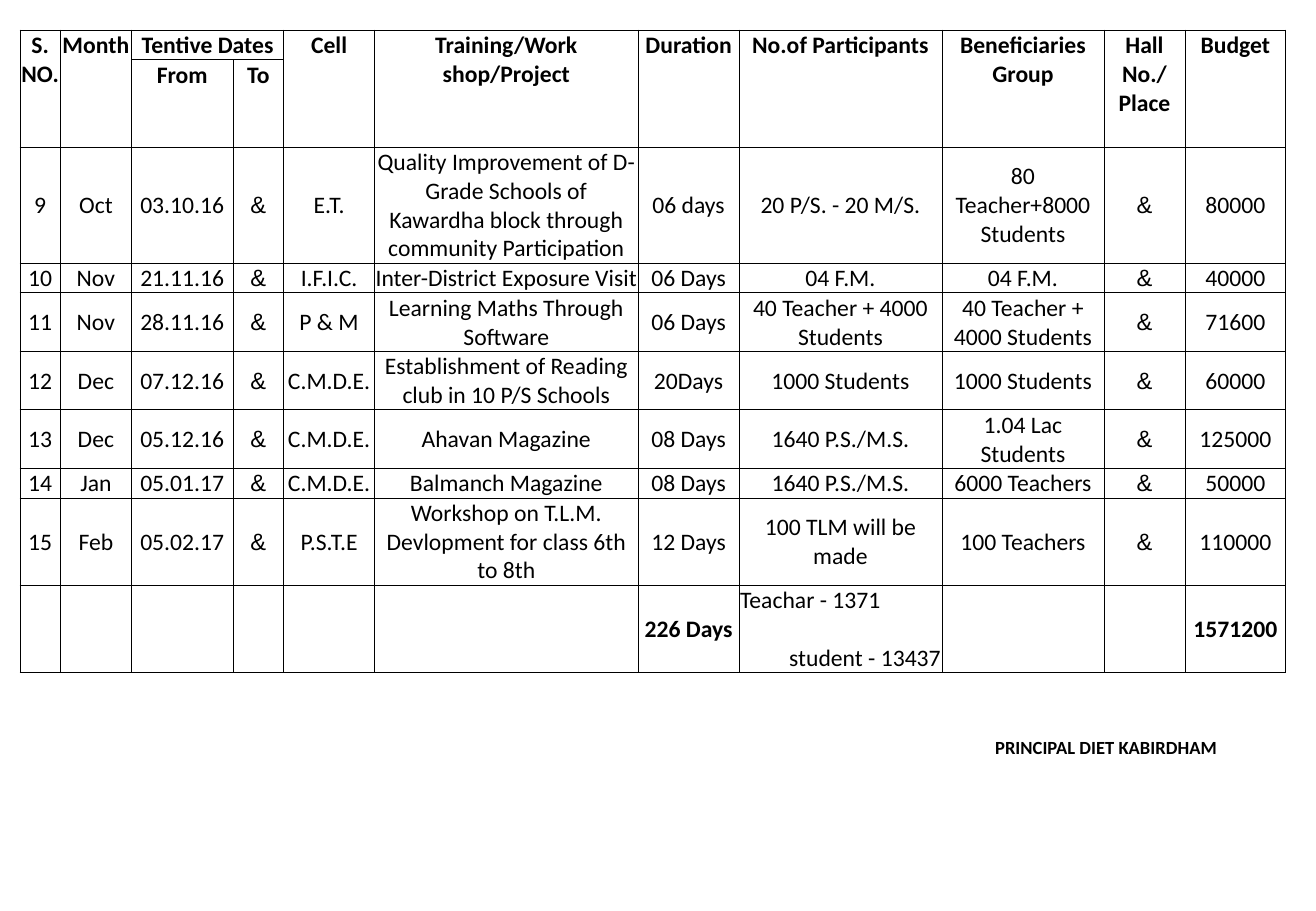
from lxml.etree import SubElement
from pptx import Presentation
from pptx.dml.color import RGBColor
from pptx.enum.text import MSO_ANCHOR, PP_ALIGN
from pptx.oxml.ns import qn
from pptx.util import Cm, Pt

COLORS = {"text": "000000", "border": "000000"}
WIDTHS = [0.84, 1.49, 2.12, 1.06, 1.9, 5.51, 2.11, 4.24, 3.39, 1.69, 2.11]
LINES = [1, 3, 4, 1, 2, 2, 2, 1, 3, 3]
ROWS = [
    ["S. NO.", "Month", "Tentive Dates", "", "Cell", "Training/Work shop/Project",
     "Duration", "No.of Participants", "Beneficiaries Group", "Hall No./ Place", "Budget"],
    ["", "", "From", "To", "", "", "", "", "", "", ""],
    ["9", "Oct", "03.10.16", "&", "E.T.",
     "Quality Improvement of D-Grade Schools of Kawardha block through community Participation",
     "06 days", "20 P/S. - 20 M/S.", "80 Teacher+8000 Students", "&", "80000"],
    ["10", "Nov", "21.11.16", "&", "I.F.I.C.", "Inter-District Exposure Visit",
     "06 Days", "04 F.M.", "04 F.M.", "&", "40000"],
    ["11", "Nov", "28.11.16", "&", "P & M", "Learning Maths Through Software",
     "06 Days", "40 Teacher + 4000 Students", "40 Teacher + 4000 Students", "&", "71600"],
    ["12", "Dec", "07.12.16", "&", "C.M.D.E.", "Establishment of Reading club in 10 P/S Schools",
     "20Days", "1000 Students", "1000 Students", "&", "60000"],
    ["13", "Dec", "05.12.16", "&", "C.M.D.E.", "Ahavan Magazine",
     "08 Days", "1640 P.S./M.S.", "1.04 Lac Students", "&", "125000"],
    ["14", "Jan", "05.01.17", "&", "C.M.D.E.", "Balmanch Magazine",
     "08 Days", "1640 P.S./M.S.", "6000 Teachers", "&", "50000"],
    ["15", "Feb", "05.02.17", "&", "P.S.T.E", "Workshop on T.L.M. Devlopment for class 6th to 8th",
     "12 Days", "100 TLM will be made", "100 Teachers", "&", "110000"],
    ["", "", "", "", "", "", "226 Days", "Teachar - 1371", "", "", "1571200"],
]


def add_text(para, text, size, bold, align=PP_ALIGN.CENTER):
    para.alignment = align
    span = para.add_run()
    span.text = text
    span.font.name = "Arial" if text == "&" else "Calibri"
    span.font.size = Pt(size)
    span.font.bold = bold
    span.font.color.rgb = RGBColor.from_string(COLORS["text"])


def prepare_cell(cell, anchor):
    cell.margin_left = cell.margin_right = cell.margin_top = Cm(0.02)
    cell.margin_bottom = 0
    cell.vertical_anchor = anchor
    cell.fill.background()


deck = Presentation()
deck.slide_width, deck.slide_height = Cm(27.51), Cm(19.05)
page = deck.slides.add_slide(deck.slide_layouts[6])

heights = [0.6 * count + 0.02 for count in LINES]
schedule = page.shapes.add_table(len(ROWS), len(WIDTHS), Cm(0.42), Cm(0.63),
                                 Cm(sum(WIDTHS)), Cm(sum(heights))).table
schedule.first_row = schedule.horz_banding = False
for column, width in zip(schedule.columns, WIDTHS):
    column.width = Cm(width)
for row, height in zip(schedule.rows, heights):
    row.height = Cm(height)

for row_index, row in enumerate(ROWS):
    header = row_index < 2
    total = row_index == len(ROWS) - 1
    for column_index, text in enumerate(row):
        cell = schedule.cell(row_index, column_index)
        properties = cell._tc.get_or_add_tcPr()
        for side in ("a:lnL", "a:lnR", "a:lnT", "a:lnB"):
            line = SubElement(properties, qn(side), w=str(Pt(0.5)))
            fill = SubElement(line, qn("a:solidFill"))
            SubElement(fill, qn("a:srgbClr"), val=COLORS["border"])
        prepare_cell(cell, MSO_ANCHOR.TOP if header else MSO_ANCHOR.MIDDLE)
        if text:
            participants = total and column_index == 7
            add_text(cell.text_frame.paragraphs[0], text, 14,
                     header or (total and not participants),
                     PP_ALIGN.LEFT if participants else PP_ALIGN.CENTER)

students = schedule.cell(len(ROWS) - 1, 7).text_frame.add_paragraph()
students.space_before = Pt(17)
add_text(students, "student - 13437", 14, False, PP_ALIGN.RIGHT)

schedule.cell(0, 2).merge(schedule.cell(0, 3))
for column_index in range(len(WIDTHS)):
    if column_index not in (2, 3):
        schedule.cell(0, column_index).merge(schedule.cell(1, column_index))

signature = page.shapes.add_table(1, 1, Cm(19.05), Cm(15.35), Cm(8.15), Cm(0.53)).table
signature.first_row = signature.horz_banding = False
signer = signature.cell(0, 0)
prepare_cell(signer, MSO_ANCHOR.BOTTOM)
add_text(signer.text_frame.paragraphs[0], "PRINCIPAL DIET KABIRDHAM", 11, True)

deck.save("out.pptx")
